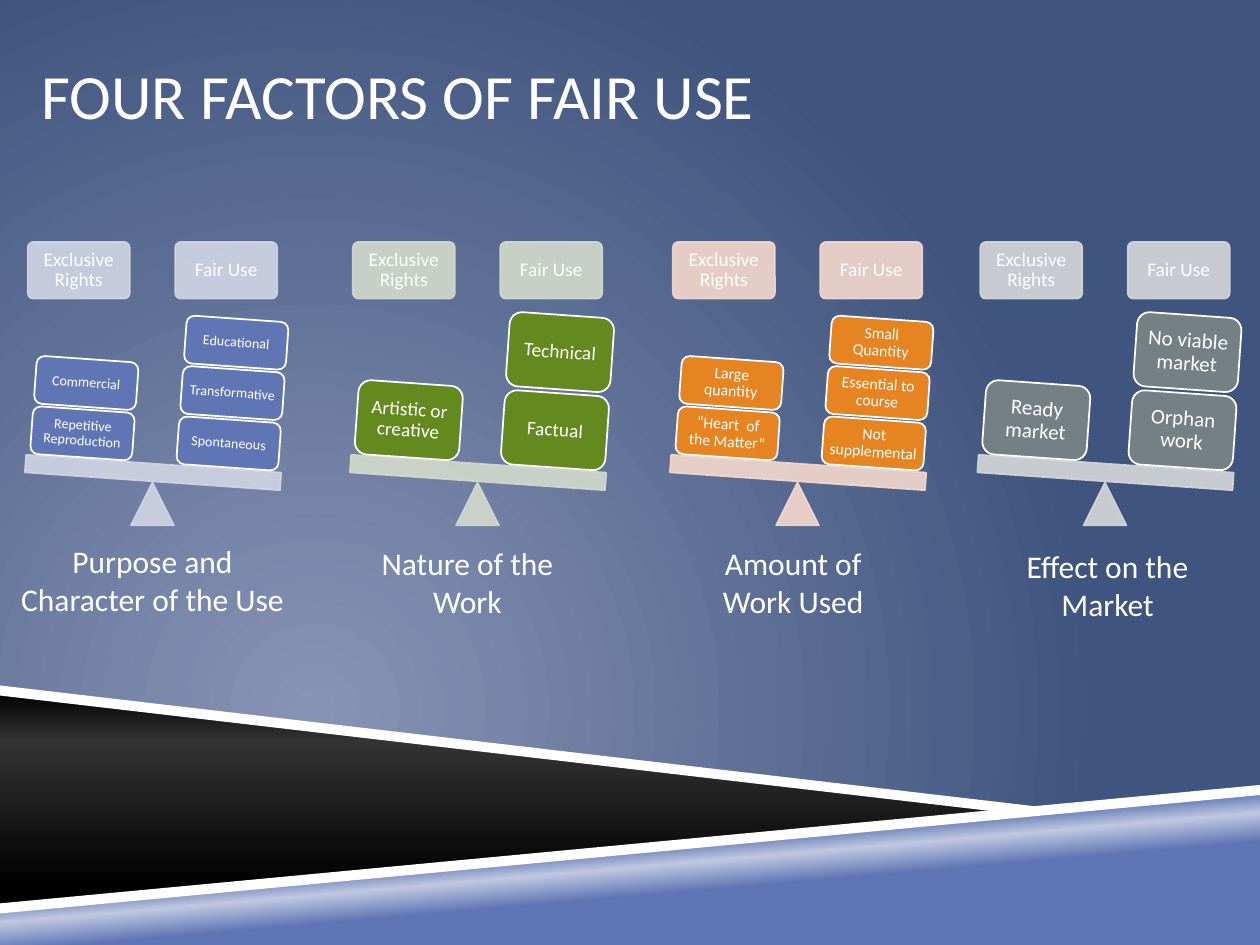
from lxml import etree
from pptx import Presentation
from pptx.dml.color import RGBColor
from pptx.enum.shapes import MSO_SHAPE as SHAPE
from pptx.enum.text import MSO_ANCHOR as ANCHOR, MSO_AUTO_SIZE as AUTO, PP_ALIGN as ALIGN
from pptx.oxml.ns import qn
from pptx.util import Inches, Pt

FONT = "Calibri"
WHITE = "FFFFFF"
TILT = 4


def rgb(value):
    """Turn a hex string into a colour."""
    return RGBColor.from_string(value)


def set_gradient(owner, stops, angle=None, focus=None):
    """Fill a shape or a slide background with a linear or circular gradient."""
    fill = owner.background.fill if hasattr(owner, "background") else owner.fill
    fill.gradient()
    grad = owner.element.find(".//" + qn("a:gradFill"))
    for child in list(grad):
        grad.remove(child)
    stop_list = etree.SubElement(grad, qn("a:gsLst"))
    for pos, color in stops:
        stop = etree.SubElement(stop_list, qn("a:gs"), pos=str(pos * 1000))
        etree.SubElement(stop, qn("a:srgbClr"), val=color)
    if focus:
        circle = etree.SubElement(grad, qn("a:path"), path="circle")
        sides = {side: str(v * 1000) for side, v in zip("ltrb", focus)}
        etree.SubElement(circle, qn("a:fillToRect"), **sides)
    else:
        etree.SubElement(grad, qn("a:lin"), ang=str(angle * 60000), scaled="0")


def write(shape, text, size, inset=(0.1, 0.05), align=ALIGN.CENTER, anchor=ANCHOR.MIDDLE, spacing=None):
    """Put one paragraph of white text into a shape."""
    tf = shape.text_frame
    tf.word_wrap = True
    tf.vertical_anchor = anchor
    tf.margin_left = tf.margin_right = Inches(inset[0])
    tf.margin_top = tf.margin_bottom = Inches(inset[1])
    p = tf.paragraphs[0]
    p.alignment = align
    if spacing:
        p.line_spacing = spacing
    r = p.add_run()
    r.text = text
    r.font.name = FONT
    r.font.size = Pt(size)
    r.font.color.rgb = rgb(WHITE)


def add_text(s, box, text, size, **options):
    """Add a text box."""
    sp = s.shapes.add_textbox(*map(Inches, box))
    write(sp, text, size, **options)
    return sp


def add_part(s, kind, box, fill, line, rotation=0, opacity=None):
    """Add a filled and outlined preset shape."""
    sp = s.shapes.add_shape(kind, *map(Inches, box))
    sp.shadow.inherit = False
    sp.rotation = rotation
    sp.fill.solid()
    sp.fill.fore_color.rgb = rgb(fill)
    sp.line.color.rgb = rgb(line)
    sp.line.width = Pt(1)
    if opacity:
        for color in sp.element.iter(qn("a:srgbClr")):
            etree.SubElement(color, qn("a:alpha"), val=str(opacity * 1000))
    return sp


def add_polygon(s, points):
    """Add a closed outline without a line."""
    corners = [(Inches(x), Inches(y)) for x, y in points]
    builder = s.shapes.build_freeform(*corners[0])
    builder.add_line_segments(corners[1:], close=True)
    sp = builder.convert_to_shape()
    sp.shadow.inherit = False
    sp.line.fill.background()
    return sp


def add_backdrop(s):
    """Draw the background, the two wedges and their white edges."""
    set_gradient(s, [(0, "8894B5"), (100, "3F547E")], focus=(50, 100, 100, 50))
    dark = add_polygon(s, [(0, 5.48), (8.14, 6.43), (0, 7.2)])
    set_gradient(dark, [(0, "000000"), (24, "333333"), (90, "000000")], angle=90)
    blue = add_polygon(s, [(0, 7.21), (10, 6.27), (10, 7.5), (0, 7.5)])
    set_gradient(blue, [(39, "6076B4"), (50, "BFC8E1"), (58, "6076B4")], angle=265)
    for edge in ([(0, 5.44), (0, 5.52), (7.98, 6.45), (8.39, 6.42)],
                 [(10, 6.23), (0, 7.17), (0, 7.25), (10, 6.31)]):
        sp = add_polygon(s, edge)
        sp.fill.solid()
        sp.fill.fore_color.rgb = rgb(WHITE)


def add_stack(s, x, y, labels, block, step, color, size, inset):
    """Pile tilted blocks upwards from the lowest one."""
    for i, label in enumerate(labels):
        box = (x + i * step[0], y - i * step[1], *block)
        sp = add_part(s, SHAPE.ROUNDED_RECTANGLE, box, color, WHITE, TILT)
        write(sp, label, size, inset=(inset, inset), spacing=0.9)


def add_scale(s, x, y, pale, color, rights, uses, size, inset):
    """Draw a balance with its headings and a stack on each side."""
    for dx, label in ((0.02, "Exclusive Rights"), (1.19, "Fair Use")):
        sp = add_part(s, SHAPE.ROUNDED_RECTANGLE, (x + dx, y, 0.81, 0.45), pale, pale, opacity=90)
        sp.adjustments[0] = 0.1
        write(sp, label, 11, inset=(0.05, 0.05), spacing=0.9)
    add_part(s, SHAPE.ISOSCELES_TRIANGLE, (x + 0.84, y + 1.91, 0.34, 0.34), pale, pale, opacity=90)
    add_part(s, SHAPE.RECTANGLE, (x, y + 1.76, 2.03, 0.14), pale, pale, TILT, opacity=90)
    if len(uses) == 3:
        block, step = (0.81, 0.38), (0.03, 0.4)
    else:
        block, step = (0.83, 0.59), (0.04, 0.62)
    base = y + 1.79 - block[1]
    add_stack(s, x + 1.21, base, uses, block, step, color, size, inset)
    add_stack(s, x + 0.05, base - 0.08, rights, block, step, color, size, inset)


def add_caption(s, box, text):
    """Name the factor below its balance."""
    sp = add_text(s, box, text, 18, anchor=ANCHOR.TOP)
    sp.text_frame.auto_size = AUTO.SHAPE_TO_FIT_TEXT


FACTORS = [
    (0.2, "D2D6E5", "6076B4", ["Repetitive Reproduction", "Commercial"],
     ["Spontaneous", "Transformative", "Educational"], 8, 0.03,
     (0, 4.25, 2.42, 0.71), "Purpose and Character of the Use"),
    (2.78, "D3DACD", "63891F", ["Artistic or creative"],
     ["Factual", "Technical"], 11, 0.05,
     (2.92, 4.27, 1.58, 0.71), "Nature of the Work"),
    (5.32, "F5D9CD", "E68422", ["“Heart  of the Matter”", "Large quantity"],
     ["Not supplemental", "Essential to course", "Small Quantity"], 9, 0.04,
     (5.42, 4.27, 1.75, 0.71), "Amount of Work Used"),
    (7.76, "D6D8D9", "758085", ["Ready market"],
     ["Orphan work", "No viable market"], 12, 0.05,
     (8, 4.29, 1.58, 0.71), "Effect on the Market"),
]


def main():
    """Build the slide and save it."""
    prs = Presentation()
    prs.slide_width, prs.slide_height = Inches(10), Inches(7.5)
    s = prs.slides.add_slide(prs.slide_layouts[6])
    add_backdrop(s)
    add_text(s, (0.33, 0.08, 9.17, 1.33), "FOUR FACTORS OF FAIR USE", 36,
             inset=(0, 0.05), align=ALIGN.LEFT)
    for x, pale, color, rights, uses, size, inset, box, caption in FACTORS:
        add_scale(s, x, 1.92, pale, color, rights, uses, size, inset)
        add_caption(s, box, caption)
    prs.save("out.pptx")


if __name__ == "__main__":
    main()
